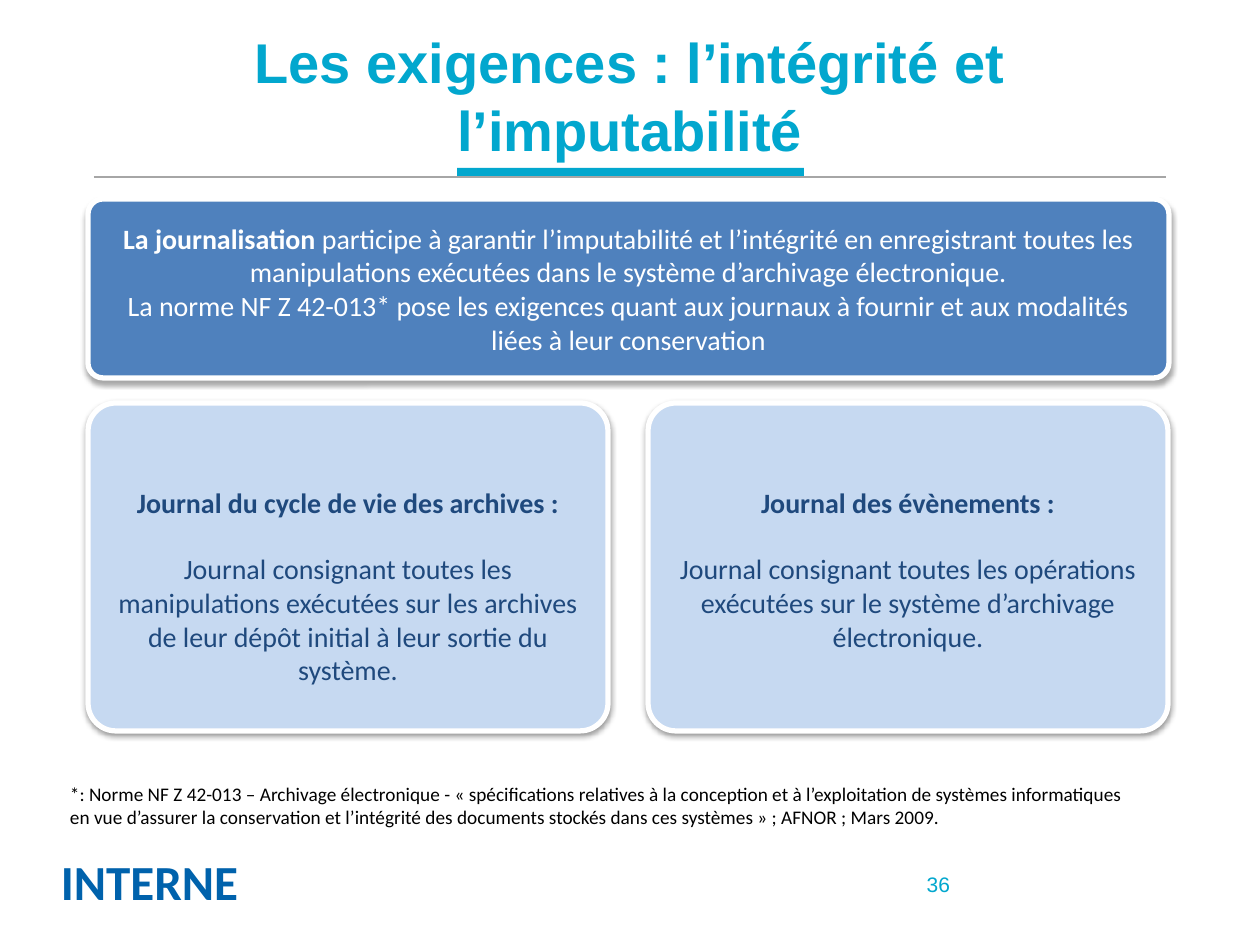
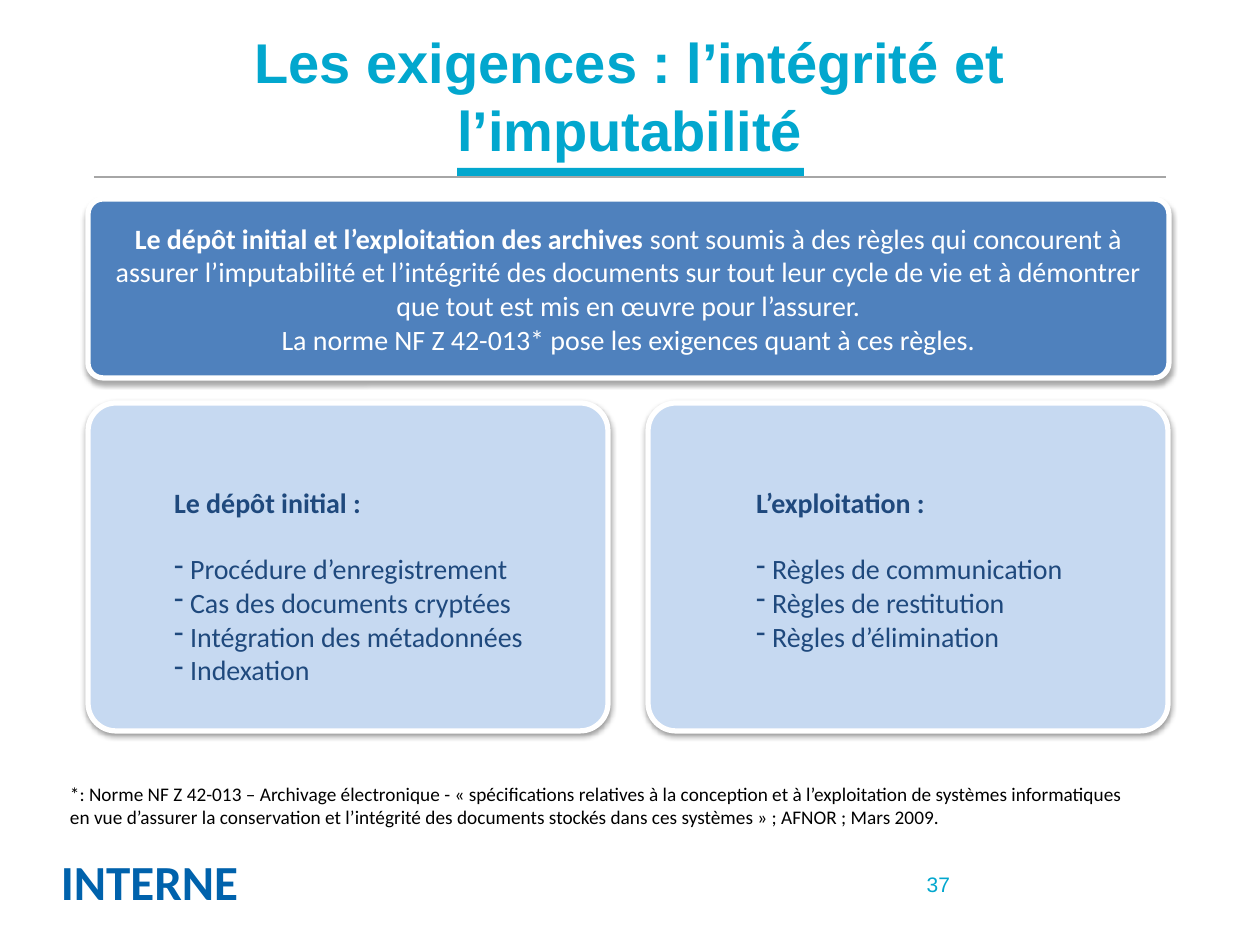
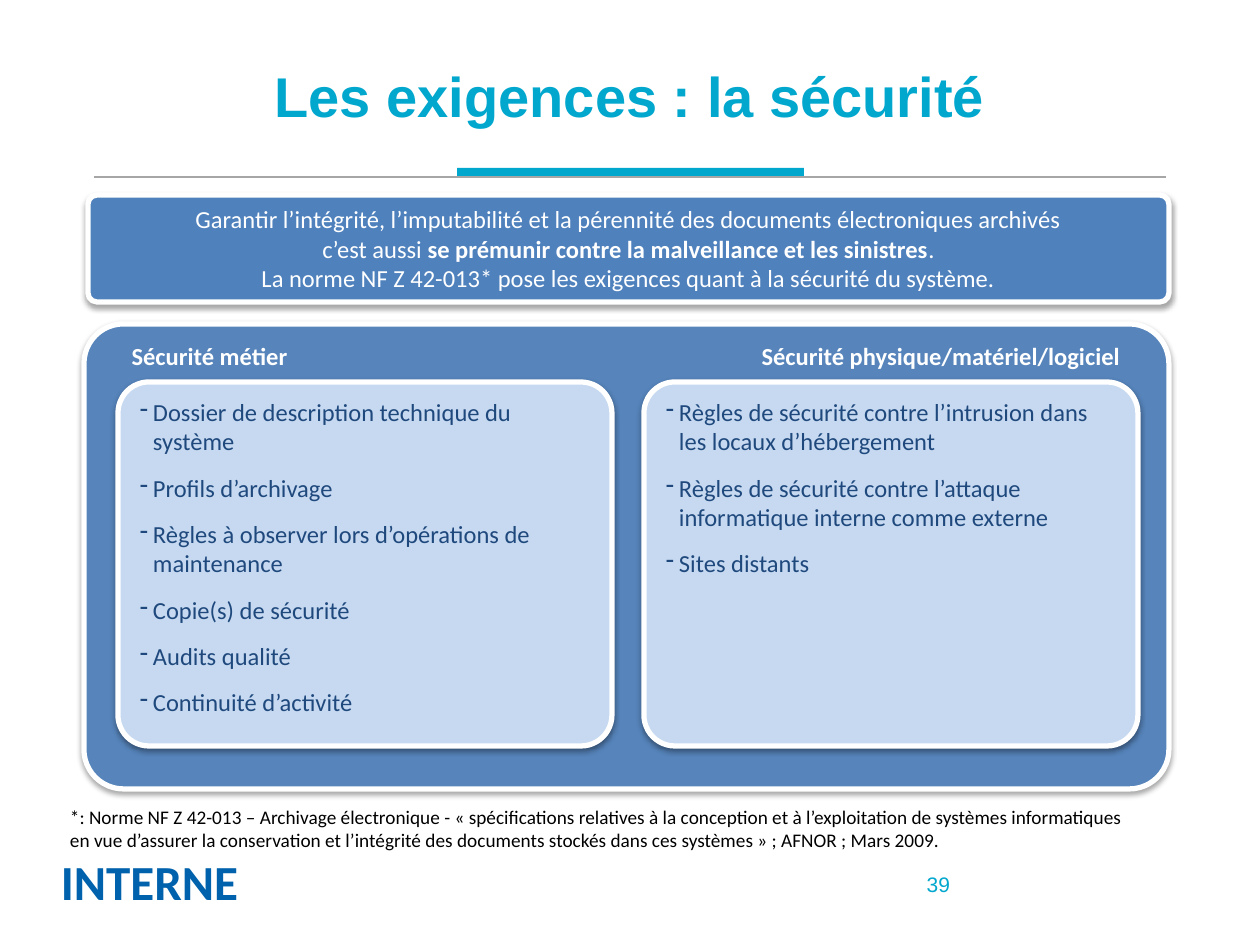
from dataclasses import dataclass

from lxml import etree
from pptx import Presentation
from pptx.dml.color import RGBColor
from pptx.enum.shapes import MSO_CONNECTOR, MSO_SHAPE
from pptx.enum.text import MSO_ANCHOR, PP_ALIGN
from pptx.oxml.ns import qn
from pptx.util import Pt

LEFT, CENTER, RIGHT = PP_ALIGN.LEFT, PP_ALIGN.CENTER, PP_ALIGN.RIGHT
TOP, MIDDLE = MSO_ANCHOR.TOP, MSO_ANCHOR.MIDDLE
ROUNDED, RECTANGLE = MSO_SHAPE.ROUNDED_RECTANGLE, MSO_SHAPE.RECTANGLE
STRAIGHT = MSO_CONNECTOR.STRAIGHT

EMU_PER_PX = 914400 / 126
SLIDE_W, SLIDE_H = 1260, 945


@dataclass(frozen=True)
class Theme:
    accent: str = "02A7CE"
    rule: str = "A6A6A6"
    label: str = "0062AC"
    banner: str = "4F81BD"
    card: str = "C6D9F1"
    ink: str = "1F497D"
    white: str = "FFFFFF"
    black: str = "000000"
    heading_font: str = "Arial"
    body_font: str = "Calibri"
    title_size: int = 32
    label_size: int = 28
    body_size: int = 16
    compact_size: int = 14
    number_size: int = 12
    note_size: int = 11
    border: int = 3
    corner: float = 0.085


THEME = Theme()

# Content: a paragraph is a list of (text, bold) runs
LABEL = "INTERNE"
NOTE = ("*: Norme NF Z 42-013 – Archivage électronique - « spécifications relatives à la "
        "conception et à l’exploitation de systèmes informatiques en vue d’assurer la "
        "conservation et l’intégrité des documents stockés dans ces systèmes » ; AFNOR ; "
        "Mars 2009.")
INTEGRITY_TITLE = "Les exigences : l’intégrité et l’imputabilité"

INTEGRITY_SLIDES = [
    {
        "number": 36,
        "banner": [
            [("La journalisation ", True),
             ("participe à garantir l’imputabilité et l’intégrité en enregistrant toutes les "
              "manipulations exécutées dans le système d’archivage électronique.", False)],
            [("La norme NF Z 42-013* pose les exigences quant aux journaux à fournir et aux "
              "modalités liées à leur conservation", False)],
        ],
        "cards": [
            {"heading": "Journal du cycle de vie des archives :",
             "text": "Journal consignant toutes les manipulations exécutées sur les archives "
                     "de leur dépôt initial à leur sortie du système."},
            {"heading": "Journal des évènements :",
             "text": "Journal consignant toutes les opérations exécutées sur le système "
                     "d’archivage électronique."},
        ],
    },
    {
        "number": 37,
        "banner": [
            [("Le dépôt initial et l’exploitation des archives ", True),
             ("sont soumis à des règles qui concourent à assurer l’imputabilité et l’intégrité "
              "des documents sur tout leur cycle de vie et à démontrer que tout est mis en œuvre "
              "pour l’assurer.", False)],
            [("La norme NF Z 42-013* pose les exigences quant à ces règles.", False)],
        ],
        "cards": [
            {"heading": "Le dépôt initial :", "inset": 78,
             "items": ["Procédure d’enregistrement", "Cas des documents cryptées",
                       "Intégration des métadonnées", "Indexation"]},
            {"heading": "L’exploitation :", "inset": 100,
             "items": ["Règles de communication", "Règles de restitution",
                       "Règles d’élimination"]},
        ],
    },
]

SECURITY_SLIDE = {
    "title": "Les exigences : la sécurité",
    "number": 39,
    "banner": [
        [("Garantir l’intégrité, l’imputabilité et la pérennité des documents électroniques "
          "archivés", False)],
        [("c’est aussi ", False),
         ("se prémunir contre la malveillance et les sinistres", True), (".", False)],
        [("La norme NF Z 42-013* pose les exigences quant à la sécurité du système.", False)],
    ],
    "columns": {
        "Sécurité métier": [
            "Dossier de description technique du système", "Profils d’archivage",
            "Règles à observer lors d’opérations de maintenance", "Copie(s) de sécurité",
            "Audits qualité", "Continuité d’activité"],
        "Sécurité physique/matériel/logiciel": [
            "Règles de sécurité contre l’intrusion dans les locaux d’hébergement",
            "Règles de sécurité contre l’attaque informatique interne comme externe",
            "Sites distants"],
    },
}


# Helpers
def px(value):
    return round(value * EMU_PER_PX)


def rgb(color):
    return RGBColor.from_string(color)


def set_frame(shape, anchor=TOP, left=13, top=6, right=13, wrap=True):
    frame = shape.text_frame
    frame.word_wrap = wrap
    frame.vertical_anchor = anchor
    frame.margin_left, frame.margin_right = px(left), px(right)
    frame.margin_top, frame.margin_bottom = px(top), px(6)
    return frame


def write(frame, paragraphs, size, color, font=THEME.body_font, align=LEFT):
    """Fill the frame with paragraphs of (text, bold) runs."""
    for index, runs in enumerate(paragraphs):
        paragraph = frame.paragraphs[0] if index == 0 else frame.add_paragraph()
        paragraph.alignment = align
        for text, bold in runs:
            run = paragraph.add_run()
            run.text = text
            run.font.size, run.font.name, run.font.bold = Pt(size), font, bold
            run.font.color.rgb = rgb(color)


def hang_dash(paragraph, indent):
    properties = paragraph._p.get_or_add_pPr()
    properties.set("marL", str(px(indent)))
    properties.set("indent", str(-px(indent)))
    etree.SubElement(properties, qn("a:buChar")).set("char", "-")


def add_text(slide, box, text, size, color, bold=False, font=THEME.body_font,
             align=LEFT, **frame_options):
    shape = slide.shapes.add_textbox(*map(px, box))
    write(set_frame(shape, **frame_options), [[(text, bold)]], size, color, font, align)


def add_panel(slide, box, fill, shadow_alpha, shadow_distance, opacity=100):
    """Rounded panel with a white border and a soft shadow below."""
    panel = slide.shapes.add_shape(ROUNDED, *map(px, box))
    panel.adjustments[0] = THEME.corner
    panel.fill.solid()
    panel.fill.fore_color.rgb = rgb(fill)
    panel.line.color.rgb = rgb(THEME.white)
    panel.line.width = Pt(THEME.border)
    panel.shadow.inherit = False
    properties = panel._element.spPr
    if opacity < 100:
        fill_color = properties.find(qn("a:solidFill")).find(qn("a:srgbClr"))
        etree.SubElement(fill_color, qn("a:alpha")).set("val", str(opacity * 1000))
    shadow = etree.SubElement(properties.find(qn("a:effectLst")), qn("a:outerShdw"),
                              blurRad=str(Pt(3.1)), dist=str(Pt(shadow_distance)),
                              dir="5400000", rotWithShape="0")
    shadow_color = etree.SubElement(shadow, qn("a:srgbClr"), val=THEME.black)
    etree.SubElement(shadow_color, qn("a:alpha")).set("val", str(shadow_alpha * 1000))
    return panel


def add_dark_panel(slide, box, opacity=100):
    return add_panel(slide, box, THEME.banner, 35, 1.8, opacity)


def add_card(slide, box):
    return add_panel(slide, box, THEME.card, 38, 1.6)


def add_banner(slide, top, height, paragraphs, size):
    banner = add_dark_panel(slide, (88, top, 1081, height))
    write(set_frame(banner, MIDDLE), paragraphs, size, THEME.white, align=CENTER)


def card_boxes(left, top, total_width, height, gap, count=2):
    width = (total_width - gap * (count - 1)) // count
    return [(left + i * (width + gap), top, width, height) for i in range(count)]


def add_base(deck, title, number, note_top):
    """Slide with the shared title, rule, label, page number and note."""
    slide = deck.slides.add_slide(deck.slide_layouts[6])
    bar = slide.shapes.add_shape(RECTANGLE, px(457), px(168), px(347), px(10))
    bar.fill.solid()
    bar.fill.fore_color.rgb = rgb(THEME.accent)
    bar.line.fill.background()
    bar.shadow.inherit = False
    rule = slide.shapes.add_connector(STRAIGHT, px(94), px(177), px(1166), px(177))
    rule.line.color.rgb = rgb(THEME.rule)
    rule.line.width = Pt(0.75)
    etree.SubElement(rule._element.spPr, qn("a:effectLst"))
    add_text(slide, (48, 846, 204, 72), LABEL, THEME.label_size, THEME.label,
             bold=True, wrap=False)
    add_text(slide, (63, 16, 1134, 158), title, THEME.title_size, THEME.accent, bold=True,
             font=THEME.heading_font, align=CENTER, anchor=MIDDLE, left=30, right=30)
    add_text(slide, (669, 859, 294, 50), str(number), THEME.number_size, THEME.accent,
             font=THEME.heading_font, align=RIGHT, anchor=MIDDLE)
    add_text(slide, (57, note_top, 1081, 59), NOTE, THEME.note_size, THEME.black)
    return slide


# Slides
def add_integrity_slide(deck, content):
    slide = add_base(deck, INTEGRITY_TITLE, content["number"], 776)
    add_banner(slide, 199, 179, content["banner"], THEME.body_size)
    boxes = card_boxes(88, 403, 1080, 328, 40)
    for box, card in zip(boxes, content["cards"]):
        items = card.get("items", [])
        body = items or [card["text"]]
        frame = set_frame(add_card(slide, box), left=card.get("inset", 13), top=74)
        write(frame, [[(card["heading"], True)]] + [[(line, False)] for line in body],
              THEME.body_size, THEME.ink, align=LEFT if items else CENTER)
        if items:
            for paragraph in frame.paragraphs[1:]:
                hang_dash(paragraph, 16)
        frame.paragraphs[1].space_before = Pt(19)


def add_security_slide(deck, content):
    slide = add_base(deck, content["title"], content["number"], 799)
    add_banner(slide, 195, 107, content["banner"], THEME.compact_size)

    # Outer panel with both column headings on one line
    panel = add_dark_panel(slide, (84, 324, 1085, 465), opacity=92)
    frame = set_frame(panel, left=36)
    write(frame, [[("\t".join(content["columns"]), True)]], THEME.compact_size, THEME.white)
    tabs = etree.SubElement(frame.paragraphs[0]._p.get_or_add_pPr(), qn("a:tabLst"))
    etree.SubElement(tabs, qn("a:tab"), pos=str(px(630)), algn="l")

    # Lists
    boxes = card_boxes(118, 382, 1020, 364, 32)
    for box, items in zip(boxes, content["columns"].values()):
        frame = set_frame(add_card(slide, box))
        write(frame, [[(item, False)] for item in items], THEME.compact_size, THEME.ink)
        for index, paragraph in enumerate(frame.paragraphs):
            hang_dash(paragraph, 13)
            if index:
                paragraph.space_before = Pt(9.6)


def main():
    deck = Presentation()
    deck.slide_width, deck.slide_height = px(SLIDE_W), px(SLIDE_H)
    for content in INTEGRITY_SLIDES:
        add_integrity_slide(deck, content)
    add_security_slide(deck, SECURITY_SLIDE)
    deck.save("out.pptx")


if __name__ == "__main__":
    main()
